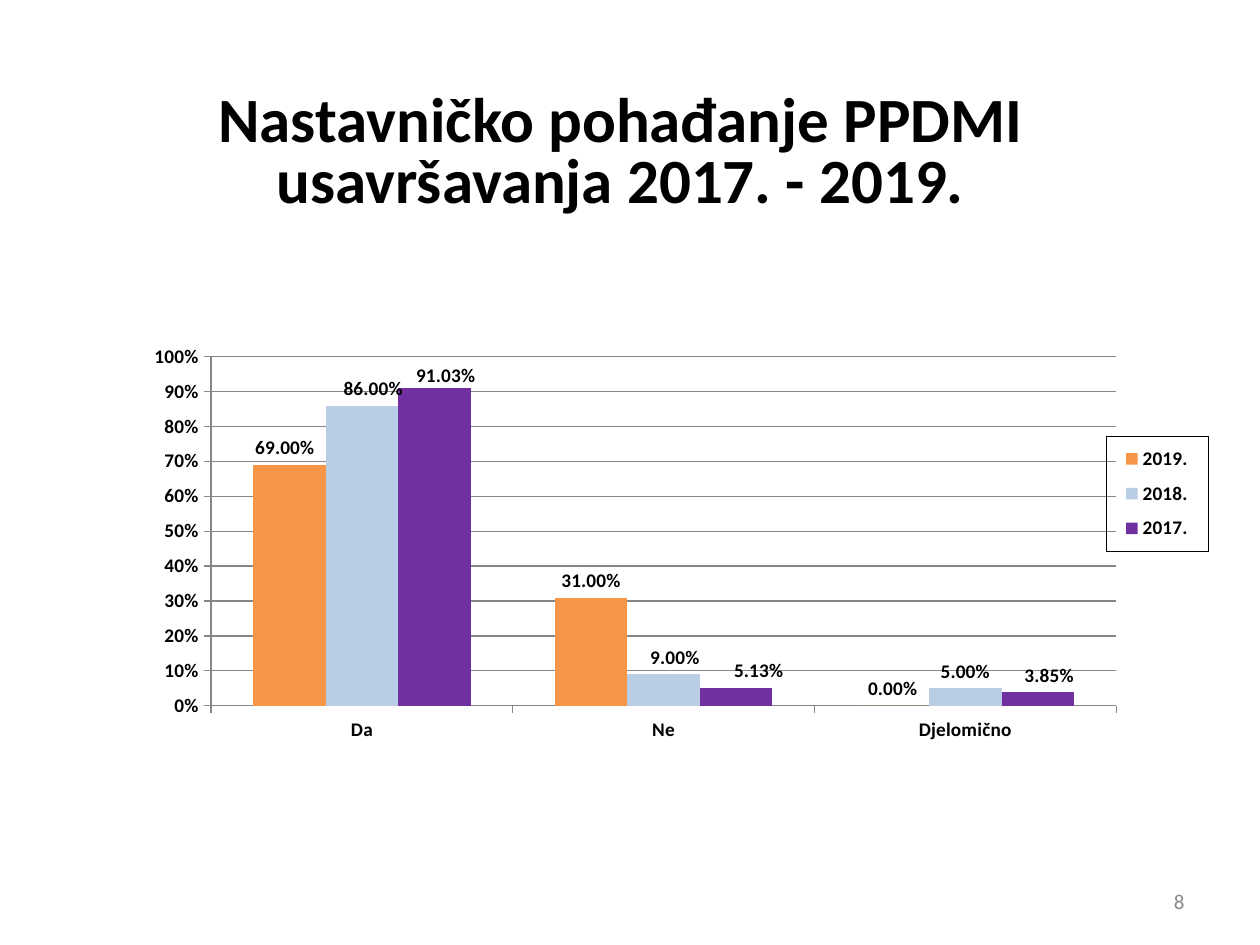
from pptx import Presentation
from pptx.chart.data import CategoryChartData
from pptx.dml.color import RGBColor
from pptx.enum.chart import (XL_CHART_TYPE as ChartType, XL_LABEL_POSITION as LabelPos,
                             XL_LEGEND_POSITION as LegendPos, XL_TICK_MARK as Tick)
from pptx.enum.text import MSO_ANCHOR as Anchor, PP_ALIGN as Align
from pptx.oxml import parse_xml
from pptx.oxml.ns import nsdecls, qn
from pptx.util import Inches, Pt

FONT = "Calibri"
BLACK, GREY, AXIS = "000000", "898989", "868686"
CATEGORIES = ["Da", "Ne", "Djelomično"]
SERIES = [
    ("2019.", "F79646", [0.69, 0.31, 0], {0: (-0.004, 0)}),
    ("2018.", "B9CDE5", [0.86, 0.09, 0.05], {0: (0.01, 0), 1: (0.01, 0)}),
    ("2017.", "7030A0", [0.9103, 0.0513, 0.0385],
     {0: (0.01, 0.01), 1: (0.02, 0), 2: (0.01, 0)}),
]


def rgb(value):
    """Return the colour for a hex string."""
    return RGBColor.from_string(value)


def set_font(font, size, color=BLACK, bold=False):
    """Apply the slide's typeface with the given size, colour and weight."""
    font.name, font.size, font.bold = FONT, Pt(size), bold
    font.color.rgb = rgb(color)


def write(sp, text, size, color=BLACK, bold=False, align=Align.LEFT, spacing=None):
    """Write one formatted, vertically centred paragraph into a shape."""
    tf = sp.text_frame
    tf.word_wrap, tf.vertical_anchor = True, Anchor.MIDDLE
    p = tf.paragraphs[0]
    p.alignment, p.line_spacing = align, spacing
    r = p.add_run()
    r.text = text
    set_font(r.font, size, color, bold)


def set_layout(parent, index, x, y, w=None, h=None, inner=False, absolute=True):
    """Give a chart part a manual layout in fractions of the chart."""
    for old in parent.findall(qn("c:layout")):
        parent.remove(old)
    tags = [("layoutTarget", "inner")] if inner else []
    if absolute:
        tags += [("xMode", "edge"), ("yMode", "edge")]
    tags += [("x", x), ("y", y), ("w", w), ("h", h)]
    body = "".join(f'<c:{tag} val="{val}"/>' for tag, val in tags if val is not None)
    parent.insert(index, parse_xml(
        f'<c:layout {nsdecls("c")}><c:manualLayout>{body}</c:manualLayout></c:layout>'))


def style_axis(axis):
    """Format the labels, ticks and line of an axis."""
    set_font(axis.tick_labels.font, 11, bold=True)
    axis.major_tick_mark, axis.minor_tick_mark = Tick.OUTSIDE, Tick.NONE
    axis.format.line.color.rgb = rgb(AXIS)


def style_series(series, color, shifts):
    """Colour a series, show its values and shift single labels."""
    series.format.fill.solid()
    series.format.fill.fore_color.rgb = rgb(color)
    series.invert_if_negative = False
    labels = series.data_labels
    labels.show_value, labels.position = True, LabelPos.OUTSIDE_END
    labels.number_format, labels.number_format_is_linked = "0.00%", False
    set_font(labels.font, 11, bold=True)
    for i, (dx, dy) in shifts.items():
        label = series.points[i].data_label
        label.position = LabelPos.OUTSIDE_END
        set_font(label.font, 11, bold=True)
        item = labels._element.find(qn("c:dLbl") + f"[{i + 1}]")
        set_layout(item, 1, dx, dy, absolute=False)


def add_legend(chart):
    """Place the framed legend over the right edge of the plot."""
    chart.has_legend = True
    legend = chart.legend
    legend.position, legend.include_in_layout = LegendPos.RIGHT, False
    set_font(legend.font, 11, bold=True)
    el = legend._element
    set_layout(el, 1, 0.903, 0.331, 0.09, 0.25)
    el.find(qn("c:overlay")).addnext(parse_xml(
        f'<c:spPr {nsdecls("c", "a")}><a:ln w="3175"><a:solidFill>'
        f'<a:srgbClr val="{BLACK}"/></a:solidFill></a:ln></c:spPr>'))


def add_attendance_chart(slide, box):
    """Add the clustered column chart of attendance by year."""
    data = CategoryChartData(number_format="0.00%")
    data.categories = CATEGORIES
    for name, _, values, _ in SERIES:
        data.add_series(name, values)
    chart = slide.shapes.add_chart(ChartType.COLUMN_CLUSTERED, *box, data).chart
    set_font(chart.font, 10)
    chart.has_title = False
    plot = chart.plots[0]
    plot.gap_width, plot.overlap, plot.vary_by_categories = 116, 0, False
    for series, (_, color, _, shifts) in zip(plot.series, SERIES):
        style_series(series, color, shifts)
    style_axis(chart.category_axis)
    axis = chart.value_axis
    style_axis(axis)
    axis.minimum_scale, axis.maximum_scale, axis.major_unit = 0, 1, 0.1
    axis.tick_labels.number_format = "0%"
    axis.tick_labels.number_format_is_linked = False
    axis.major_gridlines.format.line.color.rgb = rgb(AXIS)
    set_layout(chart._chartSpace.chart.plotArea, 0, 0.112, 0.159, 0.8, 0.757, inner=True)
    add_legend(chart)


def add_title(slide, box):
    """Place and write the slide title."""
    sp = slide.shapes.title
    sp.left, sp.top, sp.width, sp.height = box
    write(sp, "Nastavničko pohađanje PPDMI usavršavanja 2017. - 2019.", 36,
          bold=True, align=Align.CENTER, spacing=0.8)


def add_page_number(slide, box):
    """Add the page number."""
    write(slide.shapes.add_textbox(*box), "8", 12, GREY, align=Align.RIGHT)


def inches(*values):
    """Return a box of lengths in inches."""
    return [Inches(v) for v in values]


def main():
    """Build and save the slide."""
    prs = Presentation()
    prs.slide_width, prs.slide_height = inches(10, 7.5)
    slide = prs.slides.add_slide(prs.slide_layouts[5])
    add_title(slide, inches(0.75, 0.6, 8.35, 1.26))
    add_page_number(slide, inches(7.17, 6.95, 2.33, 0.4))
    add_attendance_chart(slide, inches(0.67, 2.25, 8.98, 3.66))
    prs.save("out.pptx")


if __name__ == "__main__":
    main()
